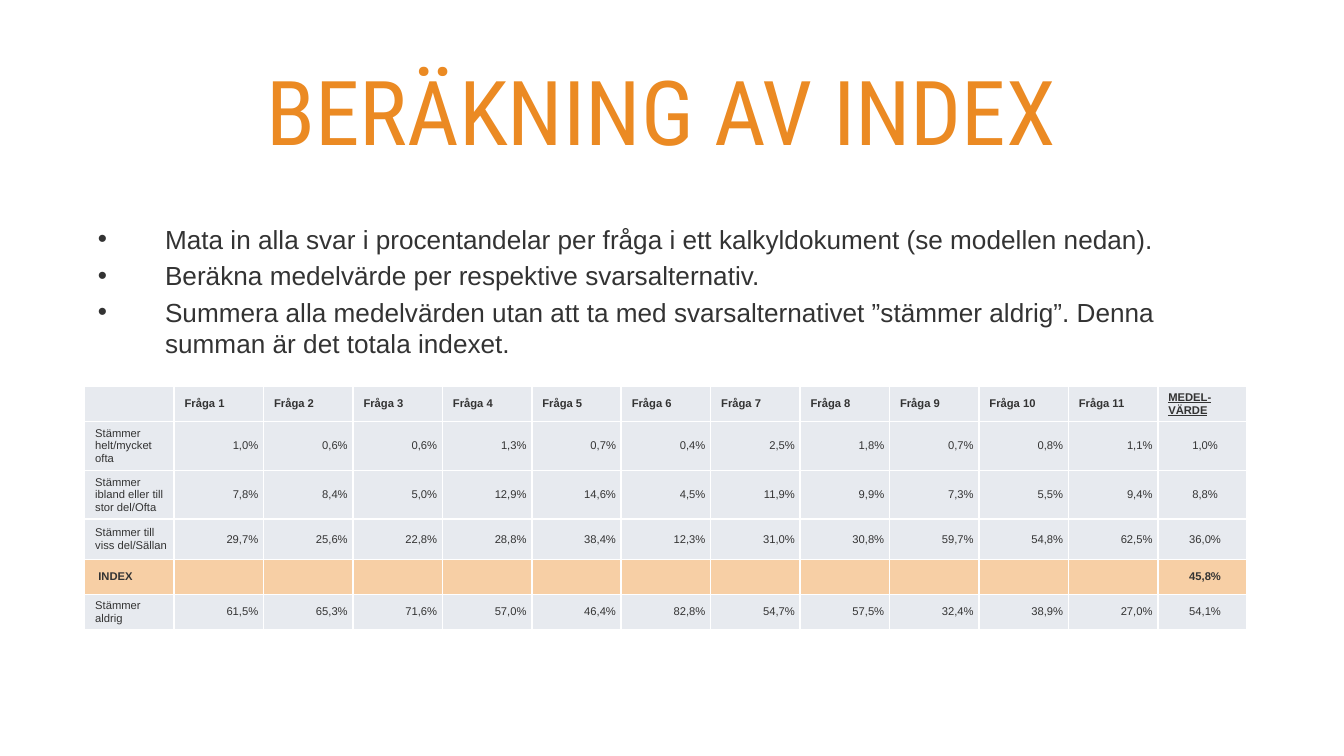
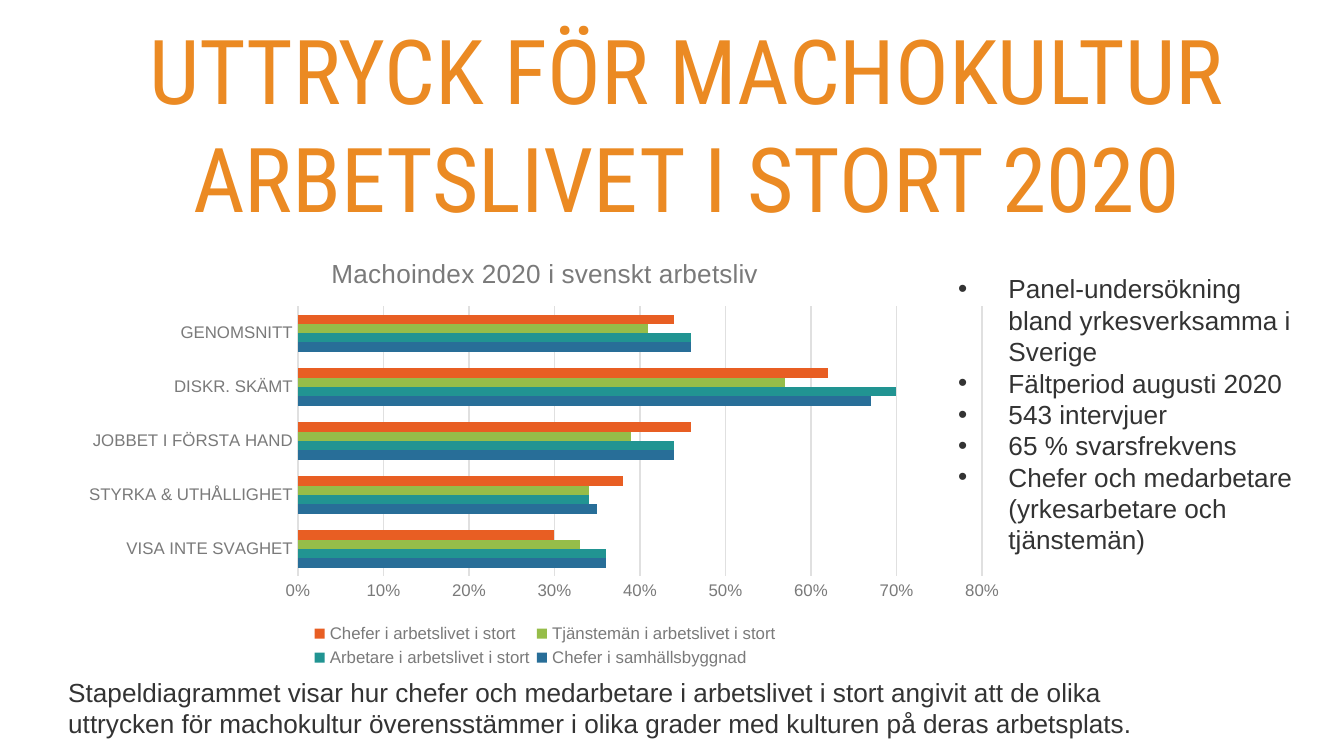
from lxml import etree
from pptx import Presentation
from pptx.chart.data import CategoryChartData
from pptx.dml.color import RGBColor
from pptx.enum.chart import XL_CHART_TYPE, XL_LEGEND_POSITION, XL_TICK_MARK
from pptx.enum.text import MSO_ANCHOR, PP_ALIGN
from pptx.oxml.ns import qn
from pptx.util import Cm, Pt

BAR_CLUSTERED = XL_CHART_TYPE.BAR_CLUSTERED
LEGEND_BOTTOM = XL_LEGEND_POSITION.BOTTOM
NO_TICK = XL_TICK_MARK.NONE
TOP, MIDDLE, BOTTOM = MSO_ANCHOR.TOP, MSO_ANCHOR.MIDDLE, MSO_ANCHOR.BOTTOM
LEFT, CENTER, RIGHT = PP_ALIGN.LEFT, PP_ALIGN.CENTER, PP_ALIGN.RIGHT

COLORS = {
    "title": "EB8A23",
    "text": "333333",
    "cell": "E7EAEF",
    "index": "F7CFA5",
    "border": "FFFFFF",
    "chart_text": "7A7A7A",
    "grid": "E0E0E0",
}
TITLE_FONT = "Roboto Condensed"
BODY_FONT = "Arial"
BODY_SIZE = 14
CELL_SIZE = 6
LINE_FACTOR = 1.2

INDEX_STEPS = [
    "Mata in alla svar i procentandelar per fråga i ett kalkyldokument (se modellen nedan).",
    "Beräkna medelvärde per respektive svarsalternativ.",
    "Summera alla medelvärden utan att ta med svarsalternativet ”stämmer aldrig”. "
    "Denna summan är det totala indexet.",
]
INDEX_LABEL = "INDEX"
INDEX_ROWS = [
    [""] + [f"Fråga {number}" for number in range(1, 12)] + ["MEDEL-VÄRDE"],
    ["Stämmer helt/mycket ofta"]
    + "1,0% 0,6% 0,6% 1,3% 0,7% 0,4% 2,5% 1,8% 0,7% 0,8% 1,1% 1,0%".split(),
    ["Stämmer ibland eller till stor del/Ofta"]
    + "7,8% 8,4% 5,0% 12,9% 14,6% 4,5% 11,9% 9,9% 7,3% 5,5% 9,4% 8,8%".split(),
    ["Stämmer till viss del/Sällan"]
    + "29,7% 25,6% 22,8% 28,8% 38,4% 12,3% 31,0% 30,8% 59,7% 54,8% 62,5% 36,0%".split(),
    [INDEX_LABEL] + [""] * 11 + ["45,8%"],
    ["Stämmer aldrig"]
    + "61,5% 65,3% 71,6% 57,0% 46,4% 82,8% 54,7% 57,5% 32,4% 38,9% 27,0% 54,1%".split(),
]
ROW_HEIGHTS = [0.66, 0.92, 0.92, 0.76, 0.66, 0.66]
COLUMN_WIDTH = 1.69

SURVEY_FACTS = [
    "Panel-undersökning bland yrkesverksamma i Sverige",
    "Fältperiod augusti 2020",
    "543 intervjuer",
    "65 % svarsfrekvens",
    "Chefer och medarbetare (yrkesarbetare och tjänstemän)",
]
CAPTION = (
    "Stapeldiagrammet visar hur chefer och medarbetare i arbetslivet i stort angivit "
    "att de olika uttrycken för machokultur överensstämmer i olika grader med kulturen "
    "på deras arbetsplats."
)
CATEGORIES = [
    "VISA INTE SVAGHET",
    "STYRKA & UTHÅLLIGHET",
    "JOBBET I FÖRSTA HAND",
    "DISKR. SKÄMT",
    "GENOMSNITT",
]
SERIES = [
    ("Chefer i samhällsbyggnad", "286E98", (0.36, 0.35, 0.44, 0.67, 0.46)),
    ("Arbetare i arbetslivet i stort", "219492", (0.36, 0.34, 0.44, 0.7, 0.46)),
    ("Tjänstemän i arbetslivet i stort", "96BD49", (0.33, 0.34, 0.39, 0.57, 0.41)),
    ("Chefer i arbetslivet i stort", "E85E23", (0.3, 0.38, 0.46, 0.62, 0.44)),
]


def rgb(color):
    return RGBColor.from_string(COLORS.get(color, color))


def style_font(font, size, color, name=BODY_FONT, bold=False):
    font.name = name
    font.size = Pt(size)
    font.bold = bold
    font.color.rgb = rgb(color)


def add_bullet(paragraph, indent):
    properties = paragraph._p.get_or_add_pPr()
    properties.set("marL", str(Cm(indent)))
    properties.set("indent", str(-Cm(indent)))
    bullet_color = etree.SubElement(properties, qn("a:buClr"))
    etree.SubElement(bullet_color, qn("a:srgbClr"), val=COLORS["text"])
    etree.SubElement(properties, qn("a:buFont"), typeface=BODY_FONT)
    etree.SubElement(properties, qn("a:buChar"), char="•")


def add_text(slide, box, lines, anchor=BOTTOM, size=BODY_SIZE, color="text",
             font=BODY_FONT, align=LEFT, indent=0, gap=0):
    shape = slide.shapes.add_textbox(*map(Cm, box))
    frame = shape.text_frame
    frame.word_wrap = True
    frame.vertical_anchor = anchor
    frame.text = "\n".join(lines)
    for position, paragraph in enumerate(frame.paragraphs):
        if indent:
            add_bullet(paragraph, indent)
        paragraph.alignment = align
        paragraph.line_spacing = Pt(size * LINE_FACTOR)
        if gap and position:
            paragraph.space_before = Pt(gap)
        for run in paragraph.runs:
            style_font(run.font, size, color, font)


def add_title(slide, left, top, text):
    add_text(slide, (left, top, 22.2, 2.24), [text], size=48, color="title",
             font=TITLE_FONT, align=CENTER)


def add_borders(cell):
    properties = cell._tc.get_or_add_tcPr()
    for side in ("lnL", "lnR", "lnT", "lnB"):
        line = etree.SubElement(properties, qn(f"a:{side}"), w=str(Pt(1)))
        fill = etree.SubElement(line, qn("a:solidFill"))
        etree.SubElement(fill, qn("a:srgbClr"), val=COLORS["border"])


def fill_cell(cell, text, fill, align, bold, underline):
    add_borders(cell)
    cell.fill.solid()
    cell.fill.fore_color.rgb = rgb(fill)
    cell.vertical_anchor = MIDDLE
    cell.margin_left = Cm(0.26 if text == INDEX_LABEL else 0.2)
    cell.margin_right = Cm(0.1)
    cell.margin_top = cell.margin_bottom = Cm(0.08)
    cell.text_frame.text = text
    paragraph = cell.text_frame.paragraphs[0]
    paragraph.alignment = align
    for run in paragraph.runs:
        style_font(run.font, CELL_SIZE, "text", bold=bold)
        run.font.underline = underline
    if not text:
        etree.SubElement(paragraph._p, qn("a:endParaRPr"), sz=str(CELL_SIZE * 100))


def add_index_table(slide, left, top):
    column_count = len(INDEX_ROWS[0])
    frame = slide.shapes.add_table(
        len(INDEX_ROWS), column_count, Cm(left), Cm(top),
        Cm(COLUMN_WIDTH * column_count), Cm(sum(ROW_HEIGHTS)))
    table = frame.table
    for column in table.columns:
        column.width = Cm(COLUMN_WIDTH)
    last = column_count - 1
    for row_number, values in enumerate(INDEX_ROWS):
        table.rows[row_number].height = Cm(ROW_HEIGHTS[row_number])
        is_header = row_number == 0
        is_index = values[0] == INDEX_LABEL
        for column_number, value in enumerate(values):
            if is_header or column_number == 0:
                align = LEFT
            else:
                align = CENTER if column_number == last else RIGHT
            fill_cell(table.cell(row_number, column_number), value,
                      "index" if is_index else "cell", align,
                      is_header or is_index, is_header and column_number == last)


def set_layout(element, position, fractions, inner=False):
    previous = element.find(qn("c:layout"))
    if previous is not None:
        element.remove(previous)
    layout = etree.Element(qn("c:layout"))
    manual = etree.SubElement(layout, qn("c:manualLayout"))
    if inner:
        etree.SubElement(manual, qn("c:layoutTarget"), val="inner")
    for mode in ("xMode", "yMode"):
        etree.SubElement(manual, qn(f"c:{mode}"), val="edge")
    for name, fraction in zip("xywh", fractions):
        etree.SubElement(manual, qn(f"c:{name}"), val=str(fraction))
    element.insert(position, layout)


def style_axis(axis):
    axis.major_tick_mark = axis.minor_tick_mark = NO_TICK
    style_font(axis.tick_labels.font, 9, "chart_text")


def style_line(line):
    line.color.rgb = rgb("grid")
    line.width = Pt(0.75)


def add_macho_chart(slide, box):
    data = CategoryChartData(number_format="0%")
    data.categories = CATEGORIES
    for name, _, values in SERIES:
        data.add_series(name, values)
    chart = slide.shapes.add_chart(BAR_CLUSTERED, *map(Cm, box), data).chart
    style_font(chart.font, 10, "text")

    chart.has_title = True
    title = chart.chart_title.text_frame
    title.text = "Machoindex 2020 i svenskt arbetsliv"
    style_font(title.paragraphs[0].runs[0].font, 14, "chart_text")

    plot = chart.plots[0]
    plot.gap_width = 182
    plot.overlap = 0
    plot.vary_by_categories = False
    for series, (_, color, _) in zip(plot.series, SERIES):
        series.format.fill.solid()
        series.format.fill.fore_color.rgb = rgb(color)

    style_axis(chart.category_axis)
    style_line(chart.category_axis.format.line)
    value_axis = chart.value_axis
    style_axis(value_axis)
    value_axis.minimum_scale = 0
    value_axis.maximum_scale = 0.8
    value_axis.major_unit = 0.1
    value_axis.tick_labels.number_format = "0%"
    value_axis.tick_labels.number_format_is_linked = False
    value_axis.format.line.fill.background()
    value_axis.has_major_gridlines = True
    style_line(value_axis.major_gridlines.format.line)

    chart.has_legend = True
    legend = chart.legend
    legend.position = LEGEND_BOTTOM
    legend.include_in_layout = False
    style_font(legend.font, 9, "chart_text")
    set_layout(legend._element, 1, (0.25, 0.88, 0.5, 0.12))
    plot_area = chart._chartSpace.find(f".//{qn('c:plotArea')}")
    set_layout(plot_area, 0, (0.24, 0.16, 0.72, 0.62), inner=True)


def build_index_slide(slide):
    add_title(slide, 1.6, 0.97, "BERÄKNING AV INDEX ")
    add_text(slide, (1.6, 4.09, 22.2, 8.41), INDEX_STEPS, anchor=TOP, indent=1.27, gap=2.8)
    add_index_table(slide, 1.6, 7.3)


def build_macho_slide(slide):
    add_title(slide, 1.88, 2.24, "UTTRYCK FÖR MACHOKULTUR\vARBETSLIVET I STORT 2020")
    add_text(slide, (1.04, 12.24, 21.03, 1.85), [CAPTION])
    add_macho_chart(slide, (1.32, 4.47, 17.96, 8.23))
    add_text(slide, (17.86, 8.05, 6.83, 2.57), SURVEY_FACTS, indent=0.95)


def main():
    presentation = Presentation()
    presentation.slide_width = Cm(25.4)
    presentation.slide_height = Cm(14.29)
    blank = presentation.slide_layouts[6]
    for build in (build_index_slide, build_macho_slide):
        build(presentation.slides.add_slide(blank))
    presentation.save("out.pptx")


if __name__ == "__main__":
    main()
